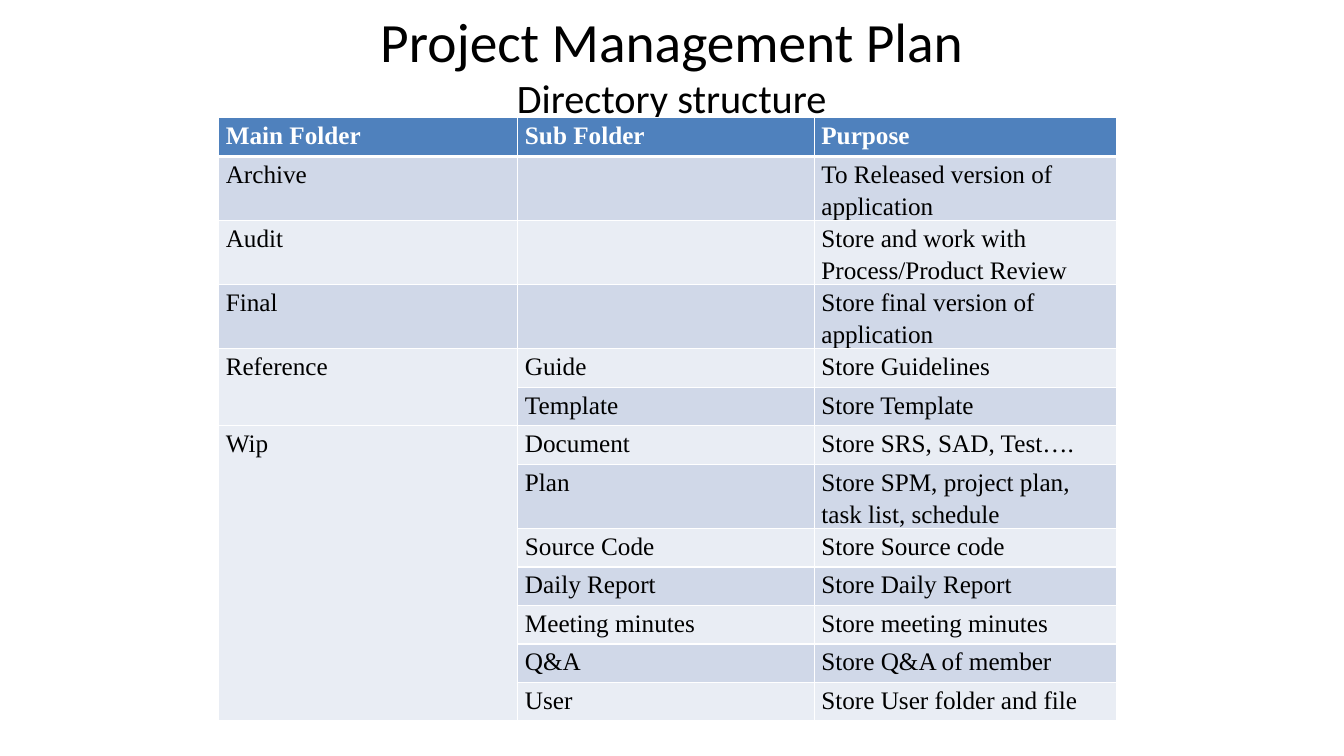
from dataclasses import dataclass

from lxml import etree
from pptx import Presentation
from pptx.dml.color import RGBColor
from pptx.enum.text import MSO_ANCHOR, MSO_AUTO_SIZE, PP_ALIGN
from pptx.oxml.ns import qn
from pptx.slide import Slide
from pptx.table import _Cell
from pptx.util import Cm, Pt

CENTER = PP_ALIGN.CENTER
MIDDLE = MSO_ANCHOR.MIDDLE
NO_AUTOFIT = MSO_AUTO_SIZE.NONE

WHITE, BLACK = "FFFFFF", "000000"
HEADER_FILL = "4F81BD"
BAND_FILLS = ("D0D8E8", "E9EDF4")
COLUMN_WIDTHS = (7.54, 7.47, 7.62)
ROW_HEIGHT = 0.97
HEADERS = ("Main Folder", "Sub Folder", "Purpose")


@dataclass
class Folder:
    name: str
    entries: list[tuple[str, str]]  # sub folder, purpose


FOLDERS = [
    Folder("Archive", [("", "To Released version of application")]),
    Folder("Audit", [("", "Store and work with Process/Product Review")]),
    Folder("Final", [("", "Store final version of application")]),
    Folder("Reference", [
        ("Guide", "Store Guidelines"),
        ("Template", "Store Template"),
    ]),
    Folder("Wip", [
        ("Document", "Store SRS, SAD, Test…."),
        ("Plan", "Store SPM, project plan, task list, schedule"),
        ("Source Code", "Store Source code"),
        ("Daily Report", "Store Daily Report"),
        ("Meeting minutes", "Store meeting minutes"),
        ("Q&A", "Store Q&A of member"),
        ("User", "Store User folder and file"),
    ]),
]


def rgb(color: str) -> RGBColor:
    return RGBColor.from_string(color)


def set_attrs(target: object, values: dict) -> None:
    for name, value in values.items():
        setattr(target, name, value)


def set_borders(cell: _Cell, top: float, bottom: float) -> None:
    """Draw white borders, with top and bottom widths in points."""
    tc_pr = cell._tc.get_or_add_tcPr()
    for tag, width in (("lnL", 1), ("lnR", 1), ("lnT", top), ("lnB", bottom)):
        ln = etree.SubElement(tc_pr, qn(f"a:{tag}"), w=str(Pt(width)))
        fill = etree.SubElement(ln, qn("a:solidFill"))
        etree.SubElement(fill, qn("a:srgbClr"), val=WHITE)


def format_cell(cell: _Cell, row: int) -> None:
    is_header = row == 0
    set_borders(cell, top=3 if row == 1 else 1, bottom=3 if is_header else 1)
    cell.fill.solid()
    fill = HEADER_FILL if is_header else BAND_FILLS[(row - 1) % 2]
    cell.fill.fore_color.rgb = rgb(fill)
    set_attrs(cell, {"margin_left": Cm(0.18), "margin_right": Cm(0.18),
                     "margin_top": 0, "margin_bottom": 0})
    p = cell.text_frame.paragraphs[0]
    p.line_spacing = 1.15
    for font in (p.font, *(r.font for r in p.runs)):
        set_attrs(font, {"name": "Times New Roman", "size": Pt(18),
                         "bold": is_header})
        font.color.rgb = rgb(WHITE if is_header else BLACK)


def add_title(slide: Slide) -> None:
    sp = slide.shapes.title
    set_attrs(sp, {"left": Cm(1.69), "top": Cm(0.76),
                   "width": Cm(30.48), "height": Cm(3.18)})
    tf = sp.text_frame
    set_attrs(tf, {"word_wrap": True, "auto_size": NO_AUTOFIT,
                   "vertical_anchor": MIDDLE, "margin_bottom": Cm(1.6)})
    p = tf.paragraphs[0]
    p.alignment = CENTER
    lines = (("Project Management Plan", 39.6), ("Directory structure", 28.8))
    for i, (text, size) in enumerate(lines):
        if i:
            p.add_line_break()
        r = p.add_run()
        r.text = text
        set_attrs(r.font, {"name": "Calibri", "size": Pt(size)})
        r.font.color.rgb = rgb(BLACK)


def add_folder_table(slide: Slide) -> None:
    row_count = 1 + sum(len(folder.entries) for folder in FOLDERS)
    table = slide.shapes.add_table(
        row_count, len(HEADERS), Cm(5.51), Cm(2.97),
        Cm(sum(COLUMN_WIDTHS)), Cm(ROW_HEIGHT * row_count)).table
    for column, width in zip(table.columns, COLUMN_WIDTHS):
        column.width = Cm(width)

    for col, header in enumerate(HEADERS):
        table.cell(0, col).text = header
    row = 1
    for folder in FOLDERS:
        first = table.cell(row, 0)
        first.text = folder.name
        if len(folder.entries) > 1:
            first.merge(table.cell(row + len(folder.entries) - 1, 0))
        for sub_folder, purpose in folder.entries:
            table.cell(row, 1).text = sub_folder
            table.cell(row, 2).text = purpose
            row += 1

    for row in range(row_count):
        table.rows[row].height = Cm(ROW_HEIGHT)
        for col in range(len(HEADERS)):
            format_cell(table.cell(row, col), row)


def main() -> None:
    prs = Presentation()
    set_attrs(prs, {"slide_width": Cm(33.87), "slide_height": Cm(19.05)})
    slide = prs.slides.add_slide(prs.slide_layouts.get_by_name("Title Only"))
    add_title(slide)
    add_folder_table(slide)
    prs.save("out.pptx")


if __name__ == "__main__":
    main()
